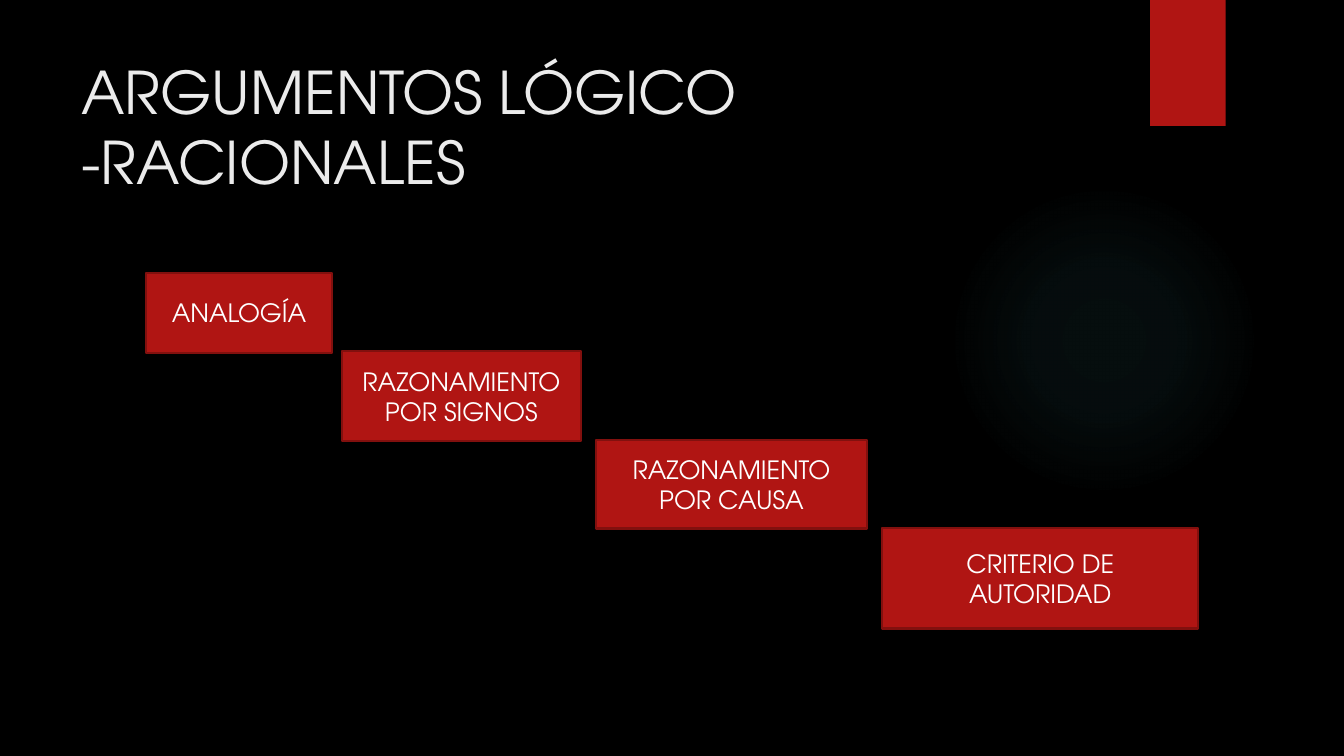
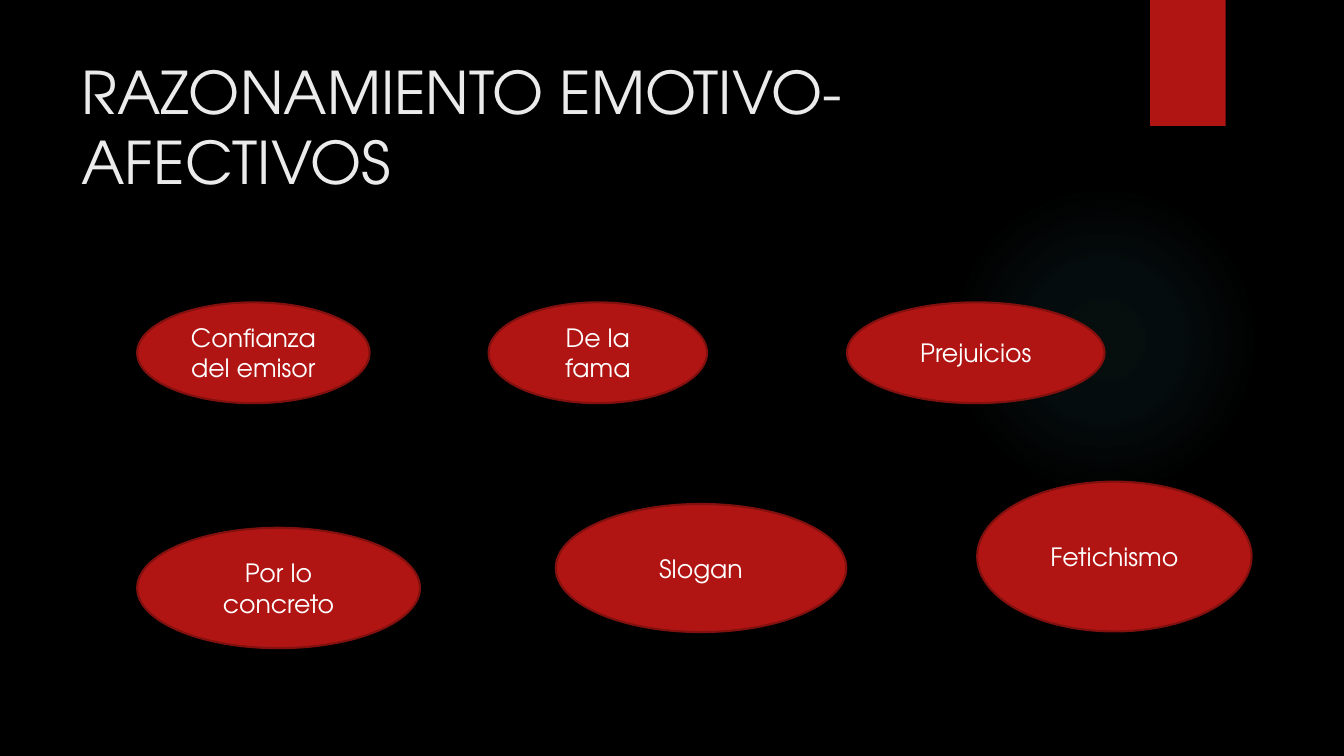
from lxml import etree
from pptx import Presentation
from pptx.dml.color import RGBColor
from pptx.enum import shapes, text
from pptx.oxml import parse_xml
from pptx.oxml.ns import nsdecls, qn
from pptx.util import Pt

COLOURS = {
    "background": "000000",
    "accent": "B01513",
    "outline": "82100E",
    "glow": "50B9C1",
    "title": "EBEBEB",
    "label": "FFFFFF",
}
FONT = "TeX Gyre Adventor"
RECTANGLE = shapes.MSO_SHAPE.RECTANGLE
OVAL = shapes.MSO_SHAPE.OVAL

# Each item: label, left, top, width, height
STEPS = [
    ("ANALOGÍA", 104.5, 195, 132.5, 57),
    ("RAZONAMIENTO POR SIGNOS", 244, 251, 171, 64),
    ("RAZONAMIENTO POR CAUSA", 426, 314.5, 193, 63),
    ("CRITERIO DE AUTORIDAD", 630, 377, 226, 72),
]
APPEALS = [
    ("Confianza del emisor", 98, 216, 166, 72),
    ("De la fama", 349, 216, 156, 72),
    ("Prejuicios", 605, 216, 184, 72),
    ("Por lo concreto", 98, 377, 202, 86),
    ("Slogan", 397, 360, 207.5, 91.5),
    ("Fetichismo", 698, 344, 196, 107),
]


def colour(name):
    return RGBColor.from_string(COLOURS[name])


class Slides:
    def __init__(self):
        self.deck = Presentation()
        self.deck.slide_width, self.deck.slide_height = Pt(960), Pt(540)
        fill = self.deck.slide_master.background.fill
        fill.solid()
        fill.fore_color.rgb = colour("background")
        self.slide = None

    def start(self, title):
        self.slide = self.deck.slides.add_slide(self.deck.slide_layouts[5])
        self.glow()
        self.ribbon()
        self.title(title)

    def shape(self, kind, left, top, width, height):
        """Add an accent-filled shape without line or shadow."""
        box = self.slide.shapes.add_shape(
            kind, Pt(left), Pt(top), Pt(width), Pt(height))
        box.shadow.inherit = False
        box.fill.solid()
        box.fill.fore_color.rgb = colour("accent")
        box.line.fill.background()
        return box

    def glow(self):
        """Add the faint round light on the right."""
        box = self.shape(OVAL, 677.5, 132, 222, 222)
        stops = "".join(
            f'<a:gs pos="{position * 1000}"><a:srgbClr val="{COLOURS["glow"]}">'
            f'<a:alpha val="{alpha * 1000}"/></a:srgbClr></a:gs>'
            for position, alpha in [(0, 7), (36, 6), (69, 0)])
        gradient = parse_xml(
            f'<a:gradFill {nsdecls("a")}><a:gsLst>{stops}</a:gsLst>'
            '<a:path path="circle"><a:fillToRect l="50000" t="50000" '
            'r="50000" b="50000"/></a:path></a:gradFill>')
        properties = box.element.spPr
        properties.replace(properties.find(qn("a:solidFill")), gradient)

    def ribbon(self):
        box = self.shape(RECTANGLE, 821.5, 0, 54, 90)
        effects = box.element.spPr.find(qn("a:effectLst"))
        shadow = etree.SubElement(
            effects, qn("a:outerShdw"), blurRad=str(Pt(3)), dist=str(Pt(2)),
            dir="5400000", rotWithShape="0")
        tint = etree.SubElement(shadow, qn("a:srgbClr"), val="000000")
        etree.SubElement(tint, qn("a:alpha"), val="45000")

    def set_text(self, box, words, size, ink, align, anchor):
        frame = box.text_frame
        frame.text = words
        frame.word_wrap = True
        frame.auto_size = text.MSO_AUTO_SIZE.NONE
        frame.vertical_anchor = anchor
        para = frame.paragraphs[0]
        para.alignment = align
        font = para.runs[0].font
        font.name, font.size = FONT, Pt(size)
        font.color.rgb = colour(ink)

    def title(self, words):
        box = self.slide.shapes.title
        box.left, box.top, box.width, box.height = Pt(51), Pt(36), Pt(741), Pt(110)
        self.set_text(box, words, 42, "title",
                      text.PP_ALIGN.LEFT, text.MSO_ANCHOR.TOP)

    def labels(self, kind, items):
        for words, *place in items:
            box = self.shape(kind, *place)
            box.line.color.rgb = colour("outline")
            box.line.width = Pt(1.5)
            self.set_text(box, words, 18, "label",
                          text.PP_ALIGN.CENTER, text.MSO_ANCHOR.MIDDLE)


def main():
    slides = Slides()
    slides.start("ARGUMENTOS LÓGICO -RACIONALES")
    slides.labels(RECTANGLE, STEPS)
    slides.start("RAZONAMIENTO EMOTIVO-AFECTIVOS")
    slides.labels(OVAL, APPEALS)
    slides.deck.save("out.pptx")


if __name__ == "__main__":
    main()
